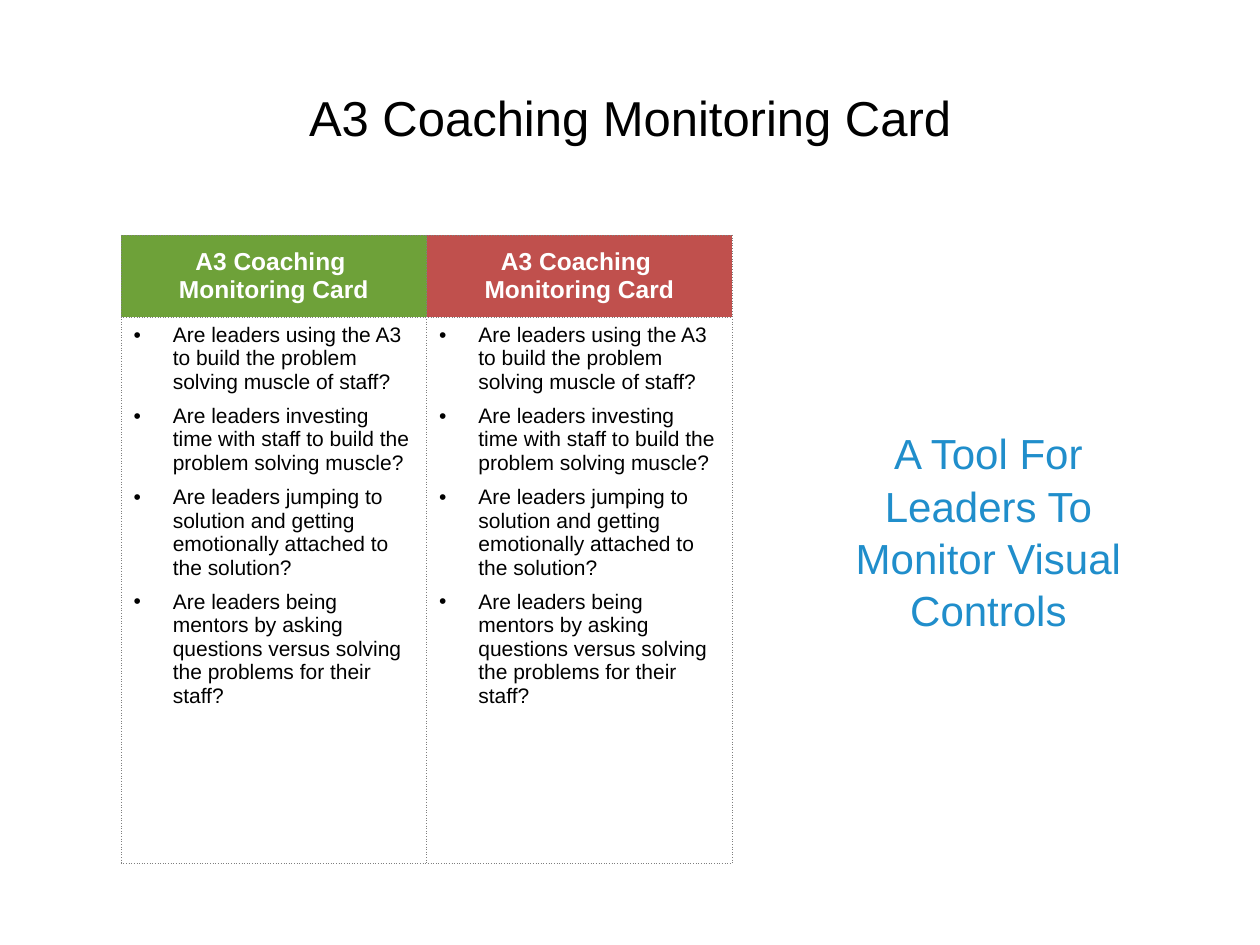
from dataclasses import dataclass

from lxml.etree import SubElement
from pptx import Presentation
from pptx.dml.color import RGBColor as RGB
from pptx.enum.text import MSO_ANCHOR as Anchor, PP_ALIGN as Align
from pptx.oxml.ns import qn
from pptx.util import Cm, Pt


@dataclass(frozen=True)
class Theme:
    font: str = "Arial"
    ink: str = "000000"
    light: str = "FFFFFF"
    green: str = "6EA139"
    red: str = "C0504D"
    blue: str = "208ECB"
    rule: str = "7F7F7F"
    title: int = 28
    note: int = 24
    head: int = 14
    body: int = 12


theme = Theme()


def write(frame, *lines, size, color, bold=False, align=Align.CENTER,
          after=0, lead=None, bullet=False):
    """Fill a text frame with one formatted paragraph per line."""
    frame.word_wrap = True
    for i, line in enumerate(lines):
        para = frame.paragraphs[0] if i == 0 else frame.add_paragraph()
        para.text = line
        para.alignment = align
        para.space_after = Pt(after)
        para.line_spacing = lead
        if bullet:
            props = para._p.get_or_add_pPr()
            props.set("marL", str(Cm(0.79)))
            props.set("indent", str(-Cm(0.79)))
            SubElement(props, qn("a:buFont"), typeface=theme.font)
            SubElement(props, qn("a:buChar"), char="•")
        for run in para.runs:
            font = run.font
            font.name, font.size, font.bold = theme.font, Pt(size), bold
            font.color.rgb = RGB.from_string(color)


def border(cell):
    """Draw a thin dotted line on all four sides; call before filling."""
    props = cell._tc.get_or_add_tcPr()
    for side in ("lnL", "lnR", "lnT", "lnB"):
        line = SubElement(props, qn(f"a:{side}"), w=str(Pt(0.25)))
        fill = SubElement(line, qn("a:solidFill"))
        SubElement(fill, qn("a:srgbClr"), val=theme.rule)
        SubElement(line, qn("a:prstDash"), val="sysDot")


asks = [
    "Are leaders using the A3 to build the problem solving muscle of staff?",
    "Are leaders investing time with staff to build the problem solving muscle?",
    "Are leaders jumping to solution and getting emotionally attached to the solution?",
    "Are leaders being mentors by asking questions versus solving the problems for their staff?",
]

deck = Presentation()
deck.slide_width, deck.slide_height = Cm(25.4), Cm(19.05)
slide = deck.slides.add_slide(deck.slide_layouts[5])

# Title
title = slide.shapes.title
title.left, title.top, title.width, title.height = Cm(1.27), Cm(0.76), Cm(22.86), Cm(3.18)
title.text_frame.vertical_anchor = Anchor.MIDDLE
write(title.text_frame, "A3 Coaching Monitoring Card", size=theme.title, color=theme.ink)

# Two identical cards, one green and one red
cards = slide.shapes.add_table(2, 2, Cm(2.44), Cm(4.74), Cm(12.32), Cm(12.67)).table
cards.first_row = cards.horz_banding = False
cards.rows[0].height, cards.rows[1].height = Cm(1.65), Cm(11.02)
for col, tint in enumerate((theme.green, theme.red)):
    cards.columns[col].width = Cm(6.16)
    head, body = cards.cell(0, col), cards.cell(1, col)
    border(head)
    head.fill.solid()
    head.fill.fore_color.rgb = RGB.from_string(tint)
    head.vertical_anchor = Anchor.MIDDLE
    write(head.text_frame, "A3 Coaching \vMonitoring Card",
          size=theme.head, color=theme.light, bold=True)
    border(body)
    body.fill.background()
    write(body.text_frame, *asks, size=theme.body, color=theme.ink,
          align=Align.LEFT, after=6, bullet=True)

# Side note
note = slide.shapes.add_textbox(Cm(16.46), Cm(8.46), Cm(6.93), Cm(4.37))
write(note.text_frame, "A Tool For Leaders To Monitor Visual Controls",
      size=theme.note, color=theme.blue, lead=1.04)

deck.save("out.pptx")
